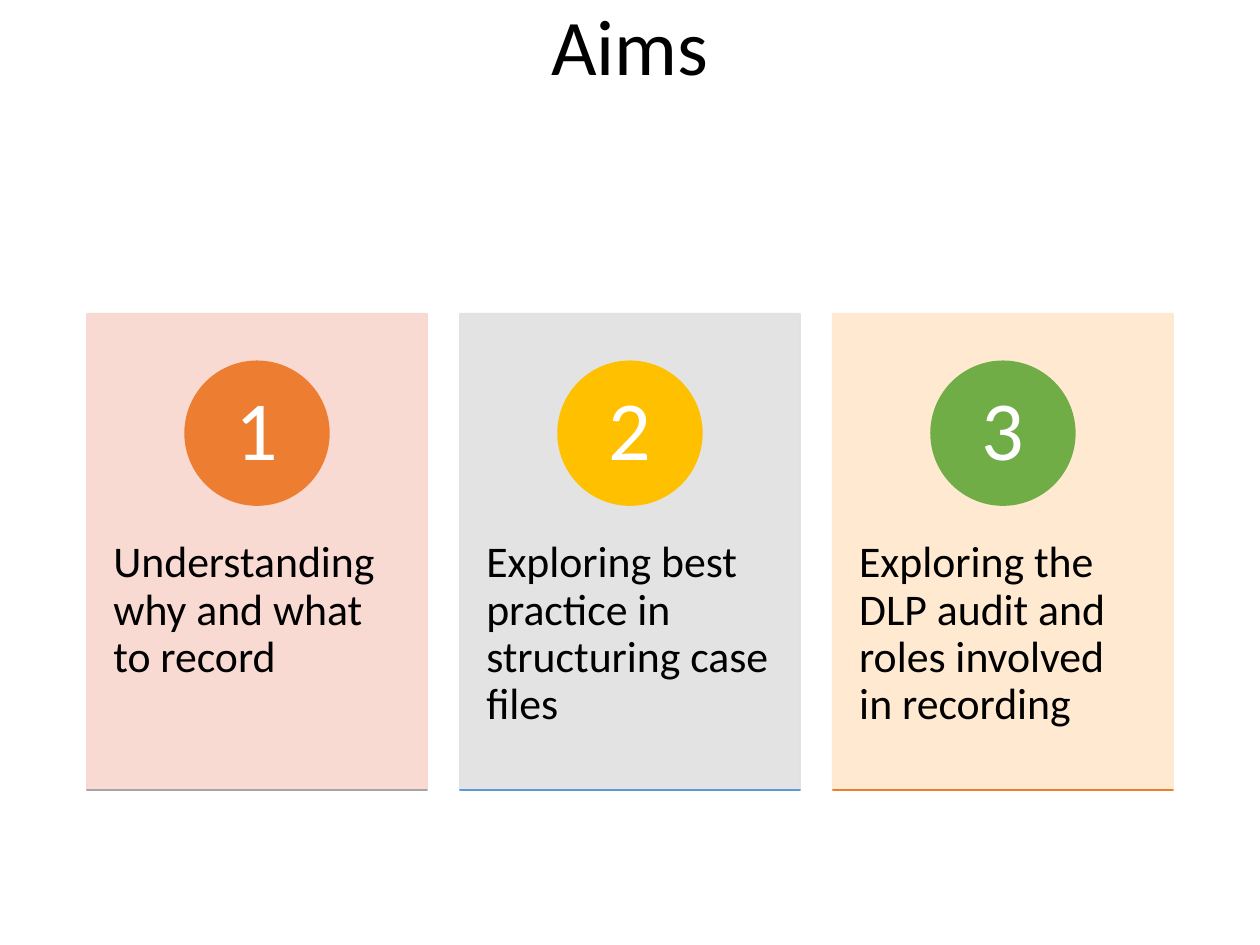
from lxml import etree
from pptx import Presentation
from pptx.dml.color import RGBColor
from pptx.enum.shapes import MSO_SHAPE
from pptx.enum.text import MSO_ANCHOR, PP_ALIGN
from pptx.oxml.ns import qn
from pptx.util import Inches, Pt

RECT, OVAL = MSO_SHAPE.RECTANGLE, MSO_SHAPE.OVAL
TOP, MIDDLE = MSO_ANCHOR.TOP, MSO_ANCHOR.MIDDLE
LEFT, CENTER = PP_ALIGN.LEFT, PP_ALIGN.CENTER

FONT = "Calibri"
BLACK = RGBColor(0x00, 0x00, 0x00)
WHITE = RGBColor(0xFF, 0xFF, 0xFF)
PINK = RGBColor(0xF8, 0xD7, 0xCE)
SILVER = RGBColor(0xE1, 0xE1, 0xE1)
CREAM = RGBColor(0xFF, 0xE8, 0xCC)
ORANGE = RGBColor(0xED, 0x7D, 0x31)
GOLD = RGBColor(0xFF, 0xC0, 0x00)
GREEN = RGBColor(0x70, 0xAD, 0x47)
GRAY = RGBColor(0xA5, 0xA5, 0xA5)
BLUE = RGBColor(0x5B, 0x9B, 0xD5)

AIMS = [
    ("Understanding why and what to record", PINK, ORANGE, GRAY),
    ("Exploring best practice in structuring case files", SILVER, GOLD, BLUE),
    ("Exploring the DLP audit and roles involved in recording", CREAM, GREEN, ORANGE),
]


def add_block(s, kind, box, color, opacity=100):
    """Add a preset shape with fill and line in one colour and return it."""
    sp = s.shapes.add_shape(kind, *(Inches(v) for v in box))
    sp.shadow.inherit = False
    sp.fill.solid()
    sp.fill.fore_color.rgb = color
    sp.line.color.rgb = color
    sp.line.width = Pt(1)
    if opacity < 100:
        for clr in sp._element.spPr.iter(qn("a:srgbClr")):
            etree.SubElement(clr, qn("a:alpha"), val=str(opacity * 1000))
    return sp


def write_text(sp, text, size, color, align, anchor, inset_x, inset_y):
    """Write one formatted paragraph into a shape."""
    tf = sp.text_frame
    tf.word_wrap = True
    tf.vertical_anchor = anchor
    tf.margin_left = tf.margin_right = Inches(inset_x)
    tf.margin_top = tf.margin_bottom = Inches(inset_y)
    p = tf.paragraphs[0]
    p.alignment = align
    p.line_spacing = 0.9
    r = p.add_run()
    r.text = text
    r.font.name = FONT
    r.font.size = Pt(size)
    r.font.color.rgb = color


def add_title(s, text, box):
    """Place the slide title in its placeholder."""
    sp = s.shapes.title
    sp.left, sp.top, sp.width, sp.height = (Inches(v) for v in box)
    write_text(sp, text, 45, BLACK, CENTER, MIDDLE, 0.1, 0.05)


def add_card(s, number, aim, box):
    """Draw one numbered card with its text, badge and base line."""
    text, tint, badge_color, base_color = aim
    x, y, w, h = box
    badge = 1.14
    add_block(s, RECT, box, tint, 90)
    body = s.shapes.add_textbox(*(Inches(v) for v in (x, y + 0.38 * h, w, 0.6 * h)))
    write_text(body, text, 25, BLACK, LEFT, TOP, 0.21, 0.36)
    sp = add_block(s, OVAL, (x + (w - badge) / 2, y + h / 10, badge, badge), badge_color)
    write_text(sp, str(number), 48, WHITE, CENTER, MIDDLE, 0.09, 0.01)
    add_block(s, RECT, (x, y + h, w, 0), base_color)


def add_cards(s, aims, box):
    """Spread the cards evenly across the box."""
    x, y, w, h = box
    card_w = 2.7
    pitch = (w - card_w) / (len(aims) - 1)
    for i, aim in enumerate(aims):
        add_card(s, i + 1, aim, (x + i * pitch, y, card_w, h))


def main():
    """Build the slide and save it."""
    prs = Presentation()
    prs.slide_width, prs.slide_height = Inches(10), Inches(7.5)
    s = prs.slides.add_slide(prs.slide_layouts[5])
    s.background.fill.solid()
    s.background.fill.fore_color.rgb = WHITE
    add_title(s, "Aims", (0.69, 0, 8.62, 0.8))
    add_cards(s, AIMS, (0.69, 2.49, 8.62, 3.78))
    prs.save("out.pptx")


if __name__ == "__main__":
    main()
